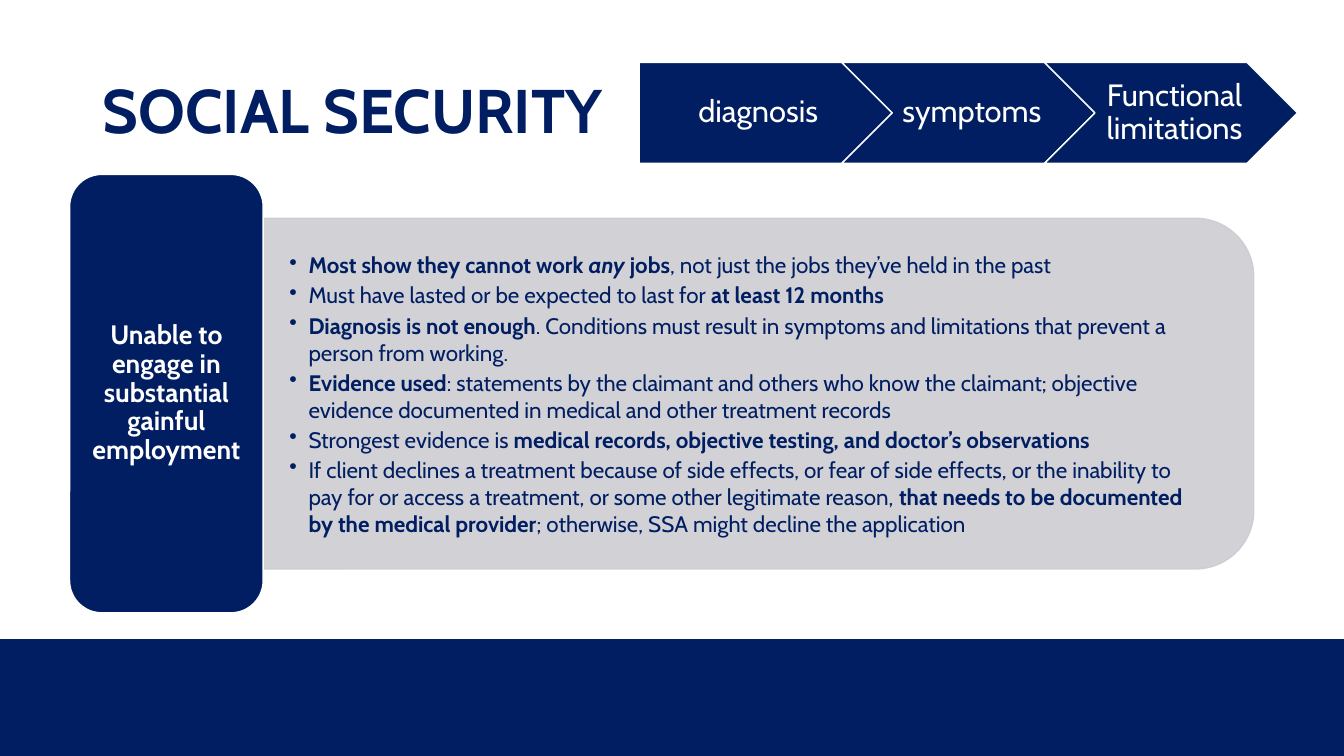
import pptx
import pptx.util
import pptx.dml.color
import pptx.enum.shapes
import pptx.enum.text
import pptx.oxml.ns
import lxml.etree

Inches = pptx.util.Inches
Pt = pptx.util.Pt
Shapes = pptx.enum.shapes.MSO_SHAPE
Align = pptx.enum.text.PP_ALIGN

NAVY = pptx.dml.color.RGBColor(0x00, 0x1E, 0x61)
GRAY = pptx.dml.color.RGBColor(0xCC, 0xCD, 0xD2)
WHITE = pptx.dml.color.RGBColor(0xFF, 0xFF, 0xFF)
FONT = "Cabin"

# Each bullet is a list of runs: text and style ("b" bold, "i" italic)
BULLETS = [
    [("Most show they cannot work ", "b"), ("any ", "bi"), ("jobs", "b"),
     (", not just the jobs they’ve held in the past", "")],
    [("Must have lasted or be expected to last for ", ""), ("at least 12 months", "b")],
    [("Diagnosis is not enough", "b"),
     (". Conditions must result in symptoms and limitations that prevent a person from working.", "")],
    [("Evidence used", "b"),
     (": statements by the claimant and others who know the claimant; objective evidence "
      "documented in medical and other treatment records", "")],
    [("Strongest evidence is ", ""),
     ("medical records, objective testing, and doctor’s observations", "b")],
    [("If client declines a treatment because of side effects, or fear of side effects, or the "
      "inability to pay for or access a treatment, or some other legitimate reason, ", ""),
     ("that needs to be documented by the medical provider", "b"),
     ("; otherwise, SSA might decline the application", "")],
]
STEPS = ["diagnosis", "symptoms", "Functional limitations"]


def add_bullet(paragraph, indent):
    properties = paragraph._p.get_or_add_pPr()
    properties.set("marL", str(indent))
    properties.set("indent", str(-indent))
    bullet = lxml.etree.SubElement(properties, pptx.oxml.ns.qn("a:buChar"))
    bullet.set("char", "•")


def write_text(shape, paragraphs, size, color, align=Align.LEFT, line_spacing=None,
               space_after=0, bullet_indent=None, insets=(0.1, 0.05, 0.1, 0.05)):
    """Fill a shape with paragraphs, each one a list of (text, style) runs."""
    frame = shape.text_frame
    frame.word_wrap = True
    frame.vertical_anchor = pptx.enum.text.MSO_ANCHOR.MIDDLE
    (frame.margin_left, frame.margin_top,
     frame.margin_right, frame.margin_bottom) = map(Inches, insets)
    for index, runs in enumerate(paragraphs):
        paragraph = frame.add_paragraph() if index else frame.paragraphs[0]
        if bullet_indent:
            add_bullet(paragraph, bullet_indent)
        paragraph.alignment = align
        paragraph.space_after = Pt(space_after)
        if line_spacing:
            paragraph.line_spacing = line_spacing
        for text, style in runs:
            run = paragraph.add_run()
            run.text = text
            run.font.name = FONT
            run.font.size = Pt(size)
            run.font.color.rgb = color
            run.font.bold = "b" in style
            run.font.italic = "i" in style


def add_box(slide, kind, left, top, width, height, fill, line=None):
    shape = slide.shapes.add_shape(kind, Inches(left), Inches(top), Inches(width), Inches(height))
    shape.shadow.inherit = False
    shape.fill.solid()
    shape.fill.fore_color.rgb = fill
    if line is None:
        shape.line.fill.background()
    else:
        shape.line.color.rgb = line
        shape.line.width = Pt(1)
    return shape


def add_text_box(slide, left, top, width, height, paragraphs, **text_format):
    box = slide.shapes.add_textbox(Inches(left), Inches(top), Inches(width), Inches(height))
    write_text(box, paragraphs, **text_format)


def set_opacity(shape, percent):
    for color in shape._element.spPr.iter(pptx.oxml.ns.qn("a:srgbClr")):
        alpha = lxml.etree.SubElement(color, pptx.oxml.ns.qn("a:alpha"))
        alpha.set("val", str(percent * 1000))


def add_steps(slide):
    for index, step in enumerate(STEPS):
        kind = Shapes.CHEVRON if index else Shapes.PENTAGON
        arrow = add_box(slide, kind, 6.34 + 2.01 * index, 0.62, 2.51, 1, NAVY, WHITE)
        write_text(arrow, [[(step, "")]], size=22, color=WHITE, align=Align.CENTER,
                   line_spacing=0.9, insets=(0.1 if index else 0.13, 0.06, 0.03, 0.06))


def main():
    presentation = pptx.Presentation()
    presentation.slide_width = Inches(13.33)
    presentation.slide_height = Inches(7.5)
    slide = presentation.slides.add_slide(presentation.slide_layouts[6])

    # Footer band and title
    add_box(slide, Shapes.RECTANGLE, 0, 6.34, 13.33, 1.16, NAVY)
    add_text_box(slide, 0.92, 0.4, 11.5, 1.45, [[("SOCIAL SECURITY", "b")]],
                 size=44, color=NAVY, line_spacing=0.9)

    # Gray panel, turned so that its round corners face right
    panel = add_box(slide, Shapes.ROUND_2_SAME_RECTANGLE, 5.78, -1.01, 3.48, 9.83, GRAY, GRAY)
    panel.rotation = 90
    set_opacity(panel, 90)
    add_text_box(slide, 2.6, 2.34, 9.66, 3.14, BULLETS, size=16, color=NAVY, space_after=2.4,
                 bullet_indent=Inches(0.19), insets=(0.27, 0.14, 0.27, 0.14))

    # Label beside the panel
    label = add_box(slide, Shapes.ROUNDED_RECTANGLE, 0.69, 1.73, 1.92, 4.35, NAVY, WHITE)
    write_text(label, [[("Unable to engage in substantial gainful employment", "b")]],
               size=19, color=WHITE, align=Align.CENTER, line_spacing=0.9,
               insets=(0.08, 0.04, 0.08, 0.04))

    # Row of arrows
    add_steps(slide)
    presentation.save("out.pptx")


if __name__ == "__main__":
    main()
